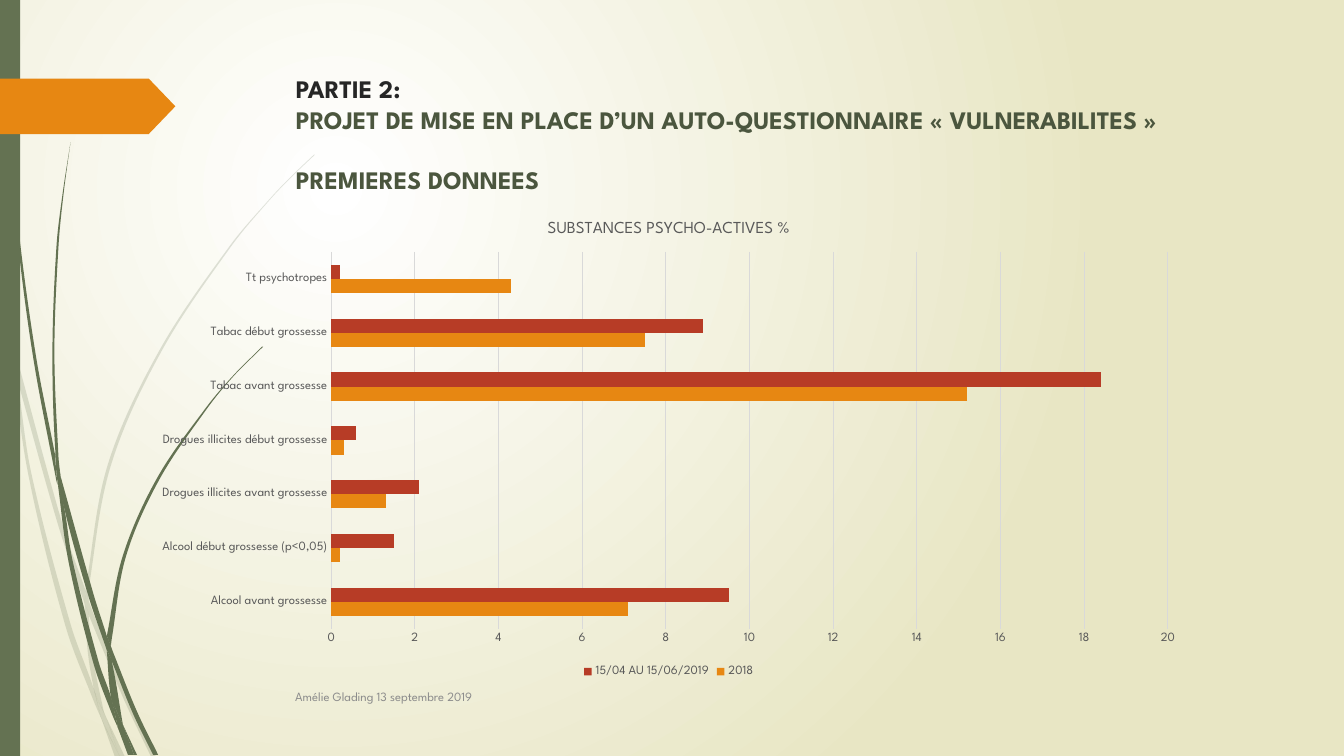
from copy import deepcopy
from math import dist

from lxml import etree
from pptx import Presentation
from pptx.chart.data import CategoryChartData
from pptx.dml.color import RGBColor
from pptx.enum.chart import XL_CHART_TYPE, XL_LEGEND_POSITION, XL_TICK_MARK
from pptx.enum.shapes import MSO_SHAPE
from pptx.enum.text import MSO_ANCHOR
from pptx.oxml import parse_xml
from pptx.oxml.ns import nsdecls, qn
from pptx.util import Cm, Pt

BAR_CLUSTERED = XL_CHART_TYPE.BAR_CLUSTERED
LEGEND_BOTTOM = XL_LEGEND_POSITION.BOTTOM
NO_TICK = XL_TICK_MARK.NONE
RECTANGLE, PENTAGON = MSO_SHAPE.RECTANGLE, MSO_SHAPE.PENTAGON
TOP, MIDDLE = MSO_ANCHOR.TOP, MSO_ANCHOR.MIDDLE

FONT = "League Spartan"
GREEN, DARK_GREEN, ORANGE, RED = "647252", "4B563E", "E78712", "B73C26"
GREY, LIGHT_GREY = "595959", "D9D9D9"
GRID = Cm(2.54)

FAINT_LEAVES = [
    ([(0, 2.99), (0.1, 3.44), (0.11, 3.5)], [(0.11, 3.5), (0.09, 3.22), (0, 2.82)]),
    ([(0.17, 3.76), (0.58, 5.22), (0.84, 5.99)], [(0.85, 5.86), (0.62, 5.2), (0.14, 3.45)]),
    ([(0.88, 6.1), (1.23, 6.94), (1.5, 7.51)], [(1.55, 7.51), (1.27, 6.92), (0.92, 6.07), (0.88, 5.96)]),
    ([(1.05, 7.11), (1.19, 7.51)], [(1.24, 7.51), (1.05, 7.11)]),
    ([(0.11, 3.5), (0.28, 4.7), (0.65, 6.21), (0.92, 6.93), (1.01, 7.14)],
     [(1.01, 7.14), (0.99, 7.07), (0.93, 6.83), (0.7, 6.19), (0.31, 4.69), (0.17, 3.76), (0.11, 3.5)]),
    ([(0.84, 5.99), (0.87, 6.46), (0.93, 6.83), (0.96, 6.92), (1.05, 7.11)],
     [(1.05, 7.11), (1.03, 7.06), (0.91, 6.46), (0.88, 6.1), (0.88, 6.08)]),
    ([(3.12, 1.53), (2.89, 1.75), (2.68, 1.97), (2.28, 2.44), (1.58, 3.48), (1.07, 4.61), (0.85, 5.84), (0.85, 5.86)],
     [(0.88, 5.96), (0.88, 5.84), (1.1, 4.62), (1.6, 3.49), (2.29, 2.45), (2.68, 1.98), (2.9, 1.75), (3.12, 1.54)]),
    ([(1.01, 7.14), (1.14, 7.51)], [(1.19, 7.51), (1.01, 7.14)]),
    ([(0.85, 5.86), (0.84, 5.99)], [(0.88, 6.08), (0.88, 6.1), (0.88, 5.96)]),
    ([(0.93, 6.83), (0.99, 7.07), (1.01, 7.14), (1.19, 7.51)], [(1.19, 7.51), (1.05, 7.11), (0.96, 6.92), (0.93, 6.83)]),
]
DARK_LEAVES = [
    ([(0.03, 0), (0.04, 0.48), (0.07, 1.1), (0.17, 2.33), (0.33, 3.55), (0.56, 4.77), (0.57, 4.81)],
     [(0.57, 4.81), (0.55, 4.57), (0.55, 4.53), (0.36, 3.55), (0.19, 2.32), (0.08, 1.09), (0.05, 0.48), (0.04, 0)]),
    ([(0.6, 4.72), (0.64, 5.05), (0.88, 5.92), (1.06, 6.45)], [(1.06, 6.33), (1.06, 6.31), (0.93, 5.9), (0.6, 4.72)]),
    ([(1.11, 6.56), (1.32, 7.08), (1.52, 7.49)], [(1.57, 7.49), (1.36, 7.06), (1.13, 6.49), (1.1, 6.41)]),
    ([(0.57, 4.77), (0.68, 5.57), (0.93, 6.59), (1.11, 7.08), (1.17, 7.22)],
     [(1.17, 7.22), (1.16, 7.17), (1.1, 6.91), (0.98, 6.57), (0.72, 5.56), (0.64, 5.05), (0.57, 4.77)]),
    ([(0.7, 1.41), (0.62, 1.93), (0.56, 2.45), (0.52, 3.49), (0.55, 4.49), (0.6, 4.72)],
     [(0.6, 4.72), (0.58, 4.53), (0.54, 3.49), (0.58, 2.45), (0.63, 1.93), (0.7, 1.41)]),
    ([(1.22, 7.19), (1.33, 7.49)], [(1.36, 7.49), (1.22, 7.19)]),
    ([(0.55, 4.49), (0.55, 4.53), (0.57, 4.77), (0.64, 5.05)], [(0.64, 5.05), (0.6, 4.72), (0.55, 4.49)]),
    ([(2.6, 3.44), (2.31, 3.73), (2.04, 4.05), (1.56, 4.74), (1.22, 5.51), (1.06, 6.31)],
     [(1.1, 6.41), (1.11, 6.33), (1.25, 5.52), (1.58, 4.76), (2.05, 4.06), (2.31, 3.74), (2.61, 3.44)]),
    ([(1.17, 7.22), (1.27, 7.49)], [(1.31, 7.49), (1.17, 7.22)]),
    ([(1.06, 6.45), (1.1, 6.91), (1.16, 7.06), (1.22, 7.19)], [(1.22, 7.19), (1.11, 6.56), (1.06, 6.45)]),
    ([(1.06, 6.31), (1.06, 6.45)], [(1.09, 6.51), (1.11, 6.56), (1.1, 6.41), (1.06, 6.31)]),
    ([(1.1, 6.91), (1.16, 7.17), (1.17, 7.22), (1.3, 7.49)], [(1.33, 7.49), (1.22, 7.19), (1.16, 7.06), (1.1, 6.91)]),
]
CATEGORIES = [
    "Alcool avant grossesse", "Alcool début grossesse (p<0,05)", "Drogues illicites avant grossesse",
    "Drogues illicites début grossesse", "Tabac avant grossesse", "Tabac début grossesse", "Tt psychotropes",
]
SERIES = [
    ("2018", (7.1, 0.2, 1.3, 0.3, 15.2, 7.5, 4.3), ORANGE),
    ("15/04 AU 15/06/2019", (9.5, 1.5, 2.1, 0.6, 18.4, 8.9, 0.2), RED),
]
PLOT_AREA = {"x": 0.18, "y": 0.105, "w": 0.793, "h": 0.786}


def colour(value):
    return RGBColor.from_string(value)


def style_font(font, size, value, bold=False):
    font.name, font.size, font.bold = FONT, Pt(size), bold
    font.color.rgb = colour(value)


def paint_shape(shape, value):
    shape.shadow.inherit = False
    shape.fill.solid()
    shape.fill.fore_color.rgb = colour(value)
    shape.line.fill.background()


def paint_background(slide):
    fill = slide.background.fill
    fill.gradient()
    for stop, value in zip(fill.gradient_stops, ("FFFFFF", "E8E6C4")):
        stop.color.rgb = colour(value)
    gradient = slide.background._cSld.find(".//" + qn("a:gradFill"))
    gradient.remove(gradient.find(qn("a:lin")))
    gradient.append(parse_xml(
        f'<a:path {nsdecls("a")} path="circle"><a:fillToRect l="50000" t="50000" r="100000" b="100000"/></a:path>'))


def handle(point, before, after, neighbour):
    reach = dist(point, neighbour) / 3 / dist(before, after)
    return tuple(p + (a - b) * reach for p, b, a in zip(point, before, after))


def edge_curves(edge):
    padded = [edge[0], *edge, edge[-1]]
    return [(handle(start, before, end, end), handle(end, after, start, start), end)
            for before, start, end, after in zip(padded, padded[1:], padded[2:], padded[3:])]


def add_leaf(group, left_edge, right_edge, opacity):
    left_edge, right_edge = ([(x * GRID, y * GRID) for x, y in edge] for edge in (left_edge, right_edge))
    builder = group.shapes.build_freeform(*left_edge[0])
    builder.add_line_segments(left_edge[1:] + right_edge, close=True)
    leaf = builder.convert_to_shape()
    curves = edge_curves(left_edge) + [None] + edge_curves(right_edge)
    for line, curve in zip(list(leaf._element.iter(qn("a:lnTo"))), curves):
        if curve:
            line.clear()
            line.tag = qn("a:cubicBezTo")
            for x, y in curve:
                point = etree.SubElement(line, qn("a:pt"))
                point.set("x", str(round(x - leaf.left)))
                point.set("y", str(round(y - leaf.top)))
    paint_shape(leaf, GREEN)
    if opacity < 100:
        fill_colour = leaf._element.spPr.find(qn("a:solidFill")).find(qn("a:srgbClr"))
        etree.SubElement(fill_colour, qn("a:alpha")).set("val", str(opacity * 1000))


def add_block(slide, kind, top, width, height, value):
    block = slide.shapes.add_shape(kind, Cm(0), Cm(top), Cm(width), Cm(height))
    paint_shape(block, value)
    return block


def add_text(slide, left, top, width, height, anchor, lines, size, bold=False):
    frame = slide.shapes.add_textbox(Cm(left), Cm(top), Cm(width), Cm(height)).text_frame
    frame.word_wrap = True
    frame.vertical_anchor = anchor
    paragraph = frame.paragraphs[0]
    for index, (text, value) in enumerate(lines):
        if index:
            paragraph.add_line_break()
            paragraph._p[-1].append(deepcopy(paragraph.runs[-1].font._element))
        if text:
            run = paragraph.add_run()
            run.text = text
            style_font(run.font, size, value, bold)


def place_plot(chart):
    plot_area = chart._chartSpace.chart.plotArea
    for layout in plot_area.findall(qn("c:layout")):
        plot_area.remove(layout)
    modes = '<c:layoutTarget val="inner"/><c:xMode val="edge"/><c:yMode val="edge"/>'
    sizes = "".join(f'<c:{name} val="{value}"/>' for name, value in PLOT_AREA.items())
    plot_area.insert(0, parse_xml(
        f'<c:layout {nsdecls("c")}><c:manualLayout>{modes}{sizes}</c:manualLayout></c:layout>'))


def add_substance_chart(slide):
    data = CategoryChartData()
    data.categories = CATEGORIES
    for name, values, _ in SERIES:
        data.add_series(name, values)
    chart = slide.shapes.add_chart(BAR_CLUSTERED, Cm(3.56), Cm(5.08), Cm(26.59), Cm(12.09), data).chart
    style_font(chart.font, 10, "000000")
    run = chart.chart_title.text_frame.paragraphs[0].add_run()
    run.text = "SUBSTANCES PSYCHO-ACTIVES %"
    style_font(run.font, 12, GREY)
    chart.has_legend = True
    chart.legend.position = LEGEND_BOTTOM
    chart.legend.include_in_layout = False
    style_font(chart.legend.font, 9, GREY)
    plot = chart.plots[0]
    plot.gap_width, plot.overlap, plot.vary_by_categories = 182, 0, False
    for series, (_, _, value) in zip(plot.series, SERIES):
        series.format.fill.solid()
        series.format.fill.fore_color.rgb = colour(value)
    value_axis = chart.value_axis
    for axis in (chart.category_axis, value_axis):
        axis.major_tick_mark = axis.minor_tick_mark = NO_TICK
        style_font(axis.tick_labels.font, 9, GREY)
    value_axis.minimum_scale, value_axis.maximum_scale, value_axis.major_unit = 0, 20, 2
    value_axis.format.line.fill.background()
    for line in (chart.category_axis.format.line, value_axis.major_gridlines.format.line):
        line.color.rgb = colour(LIGHT_GREY)
        line.width = Pt(0.75)
    place_plot(chart)


def main():
    presentation = Presentation()
    presentation.slide_width, presentation.slide_height = Cm(33.87), Cm(19.05)
    slide = presentation.slides.add_slide(presentation.slide_layouts[6])
    paint_background(slide)
    for leaves, opacity in ((FAINT_LEAVES, 20), (DARK_LEAVES, 100)):
        group = slide.shapes.add_group_shape()
        for left_edge, right_edge in leaves:
            add_leaf(group, left_edge, right_edge, opacity)
    add_block(slide, RECTANGLE, 0, 0.51, 19.05, GREEN)
    add_block(slide, PENTAGON, 1.98, 4.42, 1.4, ORANGE).adjustments[0] = 0.48
    add_text(slide, 7.21, 1.73, 24.77, 3.56, TOP, [
        ("PARTIE 2: ", "262626"),
        ("PROJET DE MISE EN PLACE D’UN AUTO-QUESTIONNAIRE « VULNERABILITES »", DARK_GREEN),
        ("", DARK_GREEN),
        ("PREMIERES DONNEES", DARK_GREEN),
    ], 18, True)
    add_substance_chart(slide)
    add_text(slide, 7.19, 17.04, 21.16, 1.02, MIDDLE, [("Amélie Glading 13 septembre 2019", "8C8C8C")], 9)
    presentation.save("out.pptx")


if __name__ == "__main__":
    main()
